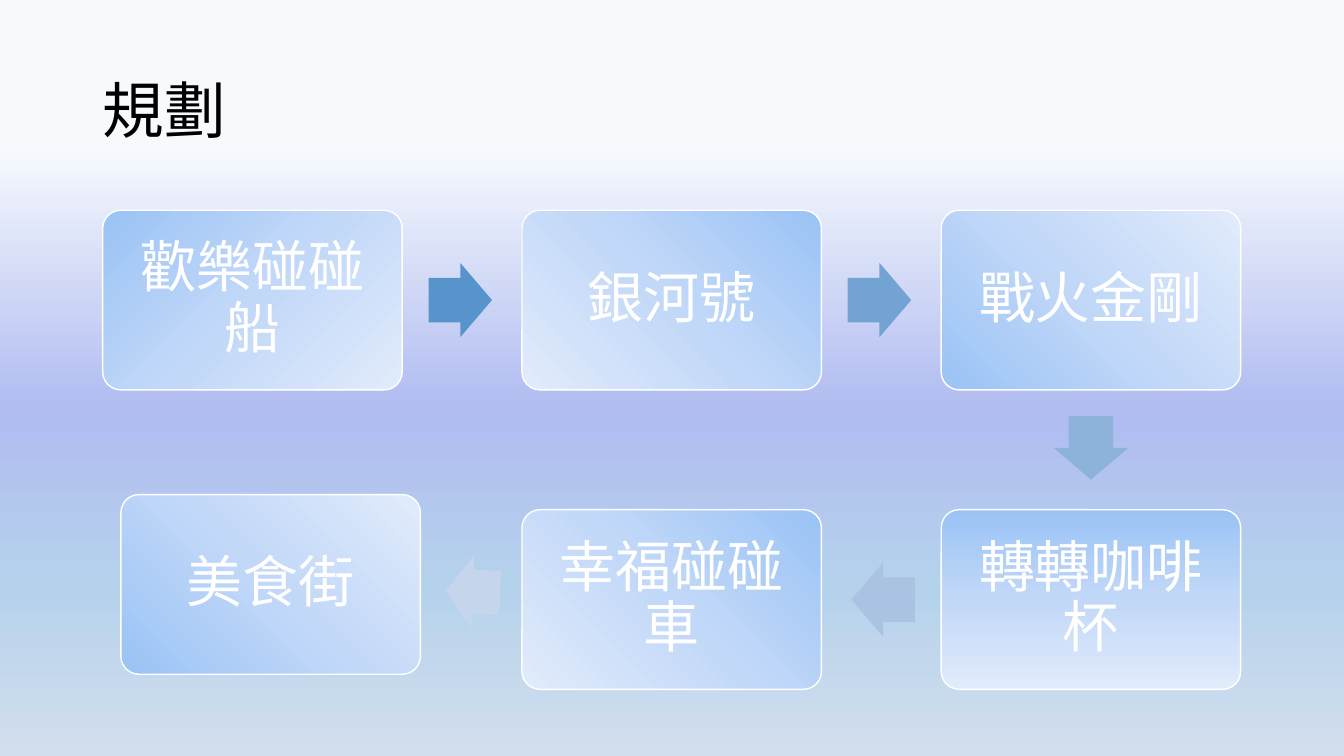
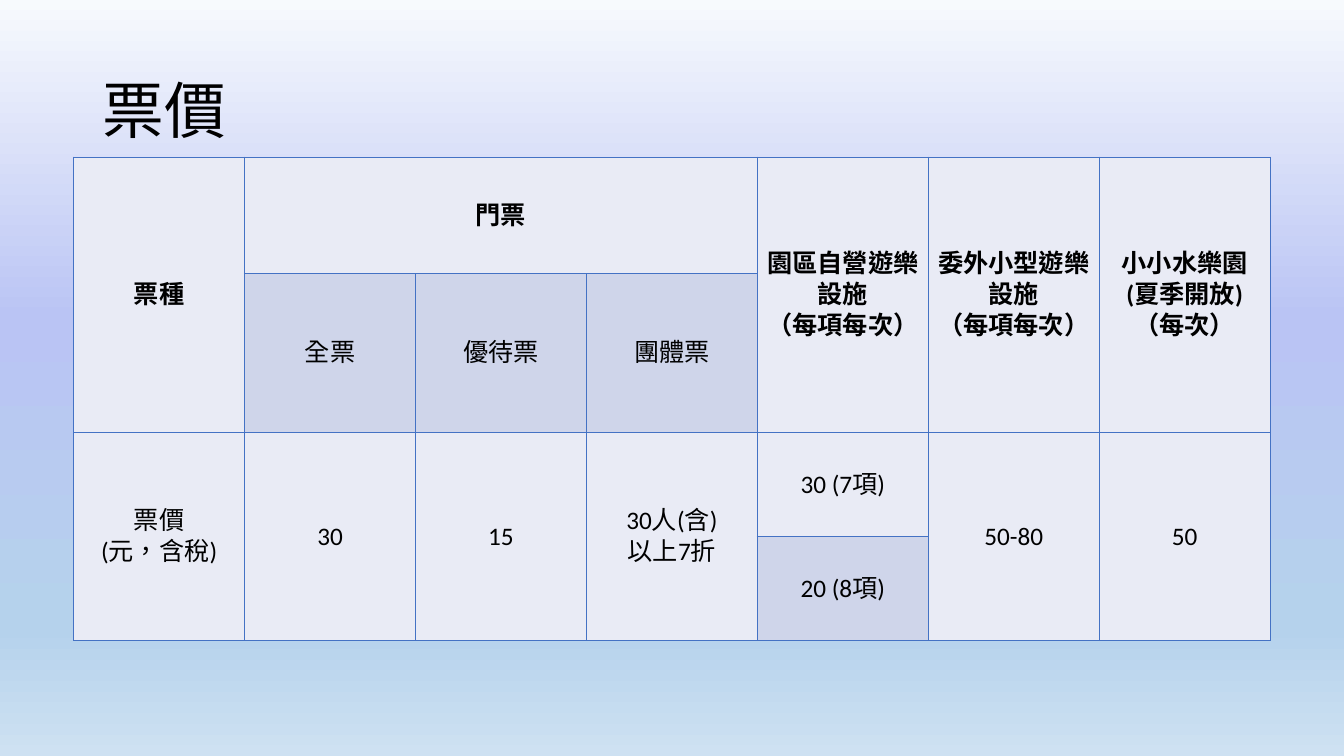
from dataclasses import dataclass
from math import atan2, cos, degrees, hypot, sin
from typing import NamedTuple, Optional

from lxml.etree import SubElement
from pptx import Presentation
from pptx.dml.color import RGBColor
from pptx.enum.shapes import MSO_SHAPE as Shape
from pptx.enum.text import MSO_ANCHOR as Anchor, PP_ALIGN as Align
from pptx.oxml.ns import qn
from pptx.util import Pt

COLORS = {
    "black": "000000",
    "white": "FFFFFF",
    "border": "4472C4",
    "cell": "E9EBF5",
    "cell_dark": "CFD5EA",
    "ride_dark": "9AC3F5",
    "ride_middle": "C2D8F8",
    "ride_light": "E1EBFB",
    "sky": "F7FAFD",
    "violet": "B1BCF1",
    "violet_light": "BAC4F4",
    "blue": "B5D2EC",
    "haze": "D3DEED",
    "haze_blue": "CEE1F2",
}
ARROW_COLORS = ["5794CB", "73A3D3", "8EB3DB", "AAC3E3", "C5D5EB"]
TITLE_FONT, BODY_FONT = "Noto Sans CJK JP", "Calibri"

BOX_WIDTH, BOX_HEIGHT = 213.9, 128.3
GRID_LEFT, GRID_TOP = 73.4, 150.2
COLUMN_STEP, ROW_STEP = 1.4 * BOX_WIDTH, BOX_WIDTH
ARROW_HEIGHT, ARROW_SHARE, ARROW_SETBACK = 53, 0.53, 1.3

TABLE_LEFT, TABLE_TOP, COLUMN_WIDTH = 52.6, 112.3, 122.1
ROW_HEIGHTS = [83.2, 113.6, 74.3, 74.3]


class Stop(NamedTuple):
    percent: int
    color: str


@dataclass
class Gradient:
    """Linear at an angle, or circular from a focus (left, top, right, bottom)."""
    stops: list[Stop]
    angle: int = 0
    focus: Optional[dict[str, int]] = None


@dataclass
class Ride:
    name: str
    column: int
    row: int
    angle: int = 0
    focus: Optional[dict[str, int]] = None
    shift_x: float = 0
    shift_y: float = 0

    @property
    def center(self) -> tuple[float, float]:
        return (GRID_LEFT + self.column * COLUMN_STEP + self.shift_x + BOX_WIDTH / 2,
                GRID_TOP + self.row * ROW_STEP + self.shift_y + BOX_HEIGHT / 2)


class Price(NamedTuple):
    row: int
    column: int
    text: str
    rows: int = 1
    columns: int = 1
    fill: str = "cell"


PLAN_SKY = Gradient([Stop(19, "sky"), Stop(54, "violet"), Stop(78, "blue"),
                     Stop(100, "haze")], 90)
PRICE_SKY = Gradient([Stop(0, "sky"), Stop(42, "violet_light"), Stop(83, "blue"),
                      Stop(100, "haze_blue")], 90)
RIDE_STOPS = [Stop(0, "ride_dark"), Stop(50, "ride_middle"), Stop(100, "ride_light")]

RIDES = [
    Ride("歡樂碰碰船", 0, 0, 45),
    Ride("銀河號", 1, 0, 135),
    Ride("戰火金剛", 2, 0, 315),
    Ride("轉轉咖啡杯", 2, 1, 90),
    Ride("幸福碰碰車", 1, 1, focus={"l": 100, "b": 100}),
    Ride("美食街", 0, 1, focus={"t": 100, "r": 100}, shift_x=13, shift_y=-10.8),
]
PRICES = [
    Price(0, 0, "票種", rows=2),
    Price(0, 1, "門票", columns=3),
    Price(0, 4, "園區自營遊樂設施\v（每項每次）", rows=2),
    Price(0, 5, "委外小型遊樂設施\v（每項每次）", rows=2),
    Price(0, 6, "小小水樂園\v(夏季開放)\v（每次）", rows=2),
    Price(1, 1, "全票", fill="cell_dark"),
    Price(1, 2, "優待票", fill="cell_dark"),
    Price(1, 3, "團體票", fill="cell_dark"),
    Price(2, 0, "票價\v(元，含稅)", rows=2),
    Price(2, 1, "30", rows=2),
    Price(2, 2, "15", rows=2),
    Price(2, 3, "30人(含)\v以上7折", rows=2),
    Price(2, 4, "30 (7項)"),
    Price(2, 5, "50-80", rows=2),
    Price(2, 6, "50", rows=2),
    Price(3, 4, "20 (8項)", fill="cell_dark"),
]


def rgb(color: str) -> RGBColor:
    return RGBColor.from_string(COLORS.get(color, color))


def apply_gradient(owner, fill, gradient: Gradient) -> None:
    """Replace the default stops and direction of the owner's gradient fill."""
    fill.gradient()
    element = owner.element.find(".//" + qn("a:gradFill"))
    for child in list(element):
        element.remove(child)
    stop_list = SubElement(element, qn("a:gsLst"))
    for stop in gradient.stops:
        mark = SubElement(stop_list, qn("a:gs"), pos=str(stop.percent * 1000))
        SubElement(mark, qn("a:srgbClr"), val=COLORS[stop.color])
    if gradient.focus:
        circle = SubElement(element, qn("a:path"), path="circle")
        SubElement(circle, qn("a:fillToRect"),
                   {side: str(value * 1000) for side, value in gradient.focus.items()})
    else:
        SubElement(element, qn("a:lin"), ang=str(gradient.angle * 60000), scaled="0")


def write(frame, text: str, font: str, size: int, color: str, align: Align,
          bold: bool = False, spacing: float = 1.0) -> None:
    frame.text = text
    frame.word_wrap = True
    for para in frame.paragraphs:
        para.alignment = align
        para.line_spacing = spacing
        for span in para.runs:
            span.font.name = font
            span.font.size = Pt(size)
            span.font.bold = bold
            span.font.color.rgb = rgb(color)
            properties = span.font._element
            properties.set("lang", "zh-TW")
            SubElement(properties, qn("a:ea"), typeface=font)


def add_page(deck, title: str, sky: Gradient):
    page = deck.slides.add_slide(deck.slide_layouts[5])
    apply_gradient(page, page.background.fill, sky)
    box = page.shapes.title
    box.left, box.top, box.width, box.height = Pt(66), Pt(28.8), Pt(828), Pt(104.4)
    write(box.text_frame, title, TITLE_FONT, 44, "black", Align.LEFT, spacing=0.9)
    box.text_frame.vertical_anchor = Anchor.MIDDLE
    return page


def add_centered(page, kind: Shape, center: tuple[float, float],
                 width: float, height: float):
    shape = page.shapes.add_shape(kind, Pt(center[0] - width / 2),
                                  Pt(center[1] - height / 2), Pt(width), Pt(height))
    shape.shadow.inherit = False
    return shape


def add_ride(page, ride: Ride) -> None:
    box = add_centered(page, Shape.ROUNDED_RECTANGLE, ride.center, BOX_WIDTH, BOX_HEIGHT)
    box.adjustments[0] = 0.1
    apply_gradient(box, box.fill, Gradient(RIDE_STOPS, ride.angle, ride.focus))
    box.line.color.rgb = rgb("white")
    box.line.width = Pt(1)
    frame = box.text_frame
    frame.margin_left = frame.margin_right = Pt(16)
    frame.margin_top = frame.margin_bottom = Pt(16)
    frame.vertical_anchor = Anchor.MIDDLE
    write(frame, ride.name, BODY_FONT, 40, "white", Align.CENTER, spacing=0.9)


def add_arrow(page, start: Ride, end: Ride, color: str) -> None:
    """Point from one ride to the next, in the gap between them."""
    (x1, y1), (x2, y2) = start.center, end.center
    angle = atan2(y2 - y1, x2 - x1)
    box_extent = BOX_HEIGHT if start.column == end.column else BOX_WIDTH
    length = ARROW_SHARE * (hypot(x2 - x1, y2 - y1) - box_extent)
    center = ((x1 + x2) / 2 - ARROW_SETBACK * cos(angle),
              (y1 + y2) / 2 - ARROW_SETBACK * sin(angle))
    arrow = add_centered(page, Shape.RIGHT_ARROW, center, length, ARROW_HEIGHT)
    arrow.rotation = degrees(angle) % 360
    arrow.adjustments[0], arrow.adjustments[1] = 0.6, 0.5
    arrow.fill.solid()
    arrow.fill.fore_color.rgb = rgb(color)
    arrow.line.fill.background()


def add_borders(cell) -> None:
    properties = cell._tc.get_or_add_tcPr()
    for side in ("a:lnL", "a:lnR", "a:lnT", "a:lnB"):
        line = SubElement(properties, qn(side), w=str(Pt(1)))
        fill = SubElement(line, qn("a:solidFill"))
        SubElement(fill, qn("a:srgbClr"), val=COLORS["border"])


def add_price_table(page) -> None:
    column_count = 7
    table = page.shapes.add_table(
        len(ROW_HEIGHTS), column_count, Pt(TABLE_LEFT), Pt(TABLE_TOP),
        Pt(column_count * COLUMN_WIDTH), Pt(sum(ROW_HEIGHTS))).table
    table.first_row = table.horz_banding = False
    for column in table.columns:
        column.width = Pt(COLUMN_WIDTH)
    for row, height in zip(table.rows, ROW_HEIGHTS):
        row.height = Pt(height)
    for cell in table.iter_cells():
        add_borders(cell)
        cell.fill.solid()
        cell.fill.fore_color.rgb = rgb("cell")
    for price in PRICES:
        cell = table.cell(price.row, price.column)
        if price.rows > 1 or price.columns > 1:
            cell.merge(table.cell(price.row + price.rows - 1,
                                  price.column + price.columns - 1))
        cell.fill.fore_color.rgb = rgb(price.fill)
        cell.margin_left = cell.margin_right = Pt(2)
        cell.margin_top = cell.margin_bottom = Pt(2)
        cell.vertical_anchor = Anchor.MIDDLE
        write(cell.text_frame, price.text, BODY_FONT, 18, "black", Align.CENTER,
              bold=price.row == 0)


def main() -> None:
    deck = Presentation()
    deck.slide_width, deck.slide_height = Pt(960), Pt(540)

    plan = add_page(deck, "規劃", PLAN_SKY)
    for ride in RIDES:
        add_ride(plan, ride)
    for start, end, color in zip(RIDES, RIDES[1:], ARROW_COLORS):
        add_arrow(plan, start, end, color)

    add_price_table(add_page(deck, "票價", PRICE_SKY))
    deck.save("out.pptx")


if __name__ == "__main__":
    main()
